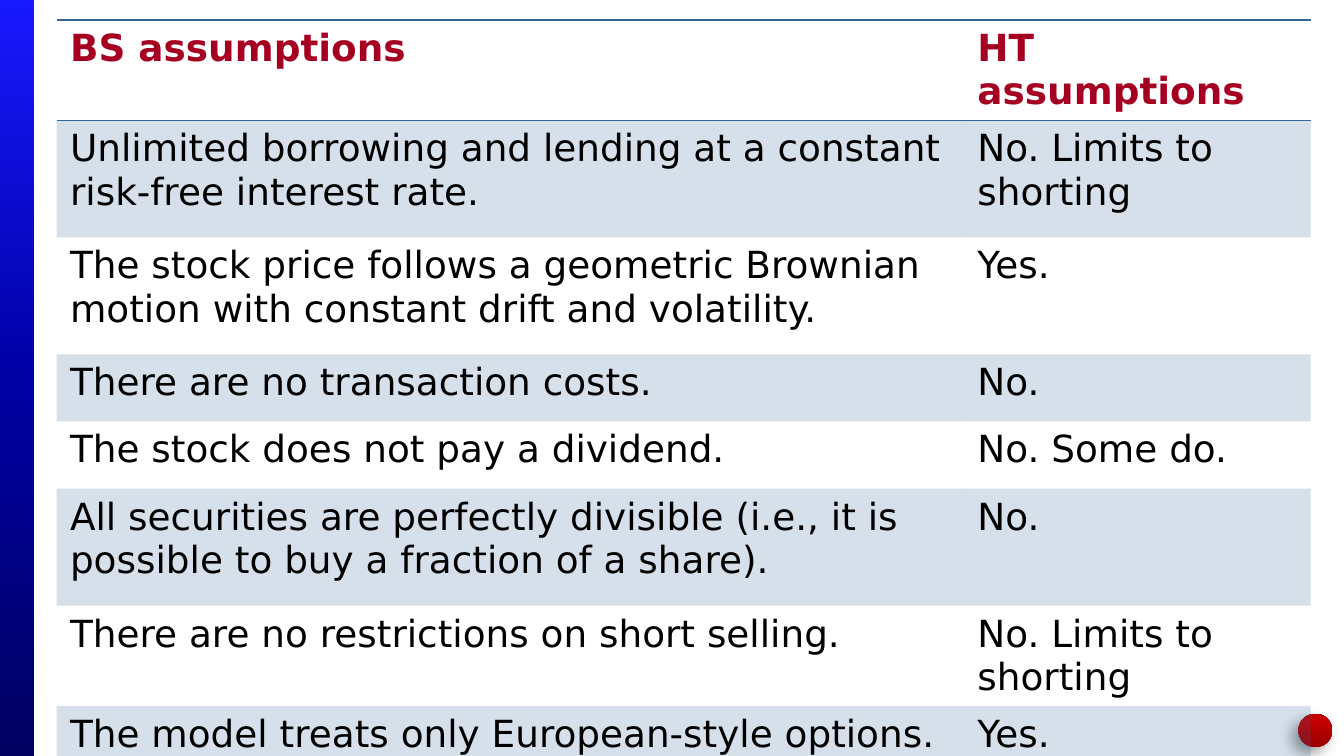
from pptx import Presentation
from pptx.dml.color import RGBColor
from pptx.enum.shapes import MSO_SHAPE
from pptx.oxml import parse_xml
from pptx.oxml.ns import nsdecls, qn
from pptx.util import Cm, Pt

CRIMSON = RGBColor(0xA5, 0x00, 0x21)
BLACK = RGBColor(0x00, 0x00, 0x00)
STEEL = RGBColor(0x33, 0x66, 0x99)
BAR_STOPS = [(0, RGBColor(0x19, 0x19, 0xFF)), (50, RGBColor(0x00, 0x00, 0xA5)),
             (100, RGBColor(0x00, 0x00, 0x60))]
BALL_STOPS = [(0, RGBColor(0x98, 0x00, 0x00)), (80, RGBColor(0xC6, 0x00, 0x00)),
              (100, RGBColor(0xC7, 0x00, 0x00))]

FONT = "DejaVu Sans"
PLAIN_STYLE = "{2D5ABB26-0587-4C30-8999-92F81FD0307C}"
COLUMNS = [17.15, 6.55]
SHORT, TALL = 1.27, 2.21
ROWS = [
    (SHORT, "BS assumptions", "HT assumptions"),
    (TALL, "Unlimited borrowing and lending at a constant risk-free interest rate.",
     "No. Limits to shorting"),
    (TALL, "The stock price follows a geometric Brownian motion with constant drift "
     "and volatility.", "Yes."),
    (SHORT, "There are no transaction costs.", "No."),
    (SHORT, "The stock does not pay a dividend.", "No. Some do."),
    (TALL, "All securities are perfectly divisible (i.e., it is possible to buy a "
     "fraction of a share).", "No."),
    (SHORT, "There are no restrictions on short selling.", "No. Limits to shorting"),
    (SHORT, "The model treats only European-style options.", "Yes."),
]


def add_gradient_shape(s, kind, box, stops, angle):
    """Add a borderless shape filled with a linear gradient."""
    sp = s.shapes.add_shape(kind, *map(Cm, box))
    sp.shadow.inherit = False
    sp.line.fill.background()
    sp.fill.gradient()
    grad = sp._element.spPr.find(qn("a:gradFill"))
    stop_xml = "".join(f'<a:gs pos="{pos * 1000}"><a:srgbClr val="{color}"/></a:gs>'
                       for pos, color in stops)
    grad.getparent().replace(grad, parse_xml(
        f'<a:gradFill {nsdecls("a")} rotWithShape="1"><a:gsLst>{stop_xml}</a:gsLst>'
        f'<a:lin ang="{angle * 60000}" scaled="0"/></a:gradFill>'))
    return sp


def add_side_bar(s, box):
    """Add the blue bar down the left edge."""
    add_gradient_shape(s, MSO_SHAPE.RECTANGLE, box, BAR_STOPS, 90)


def add_ball(s, box):
    """Add the red ball with its soft shadow."""
    sp = add_gradient_shape(s, MSO_SHAPE.OVAL, box, BALL_STOPS, 270)
    sp._element.spPr.find(qn("a:effectLst")).append(parse_xml(
        f'<a:outerShdw {nsdecls("a")} blurRad="{Pt(8)}" dist="{Pt(5)}" dir="8100000" '
        'algn="tr" rotWithShape="0"><a:srgbClr val="000000"><a:alpha val="40000"/>'
        '</a:srgbClr></a:outerShdw>'))


def add_border(cell, side):
    """Draw a thin steel line along one side of a cell."""
    cell._tc.get_or_add_tcPr().insert(0, parse_xml(
        f'<a:ln{side} {nsdecls("a")} w="{Pt(1)}"><a:solidFill>'
        f'<a:srgbClr val="{STEEL}"/></a:solidFill></a:ln{side}>'))


def style_cell(cell, row, last):
    """Set the font, band and borders of a cell from its row number."""
    font = cell.text_frame.paragraphs[0].font
    font.name, font.size, font.bold = FONT, Pt(20), row == 0
    font.color.rgb = BLACK if row else CRIMSON
    if row % 2:
        cell.fill.solid()
        cell.fill.fore_color.rgb = STEEL
        color = cell._tc.tcPr.find(f".//{qn('a:srgbClr')}")
        color.append(parse_xml(f'<a:alpha {nsdecls("a")} val="20000"/>'))
    else:
        cell.fill.background()
    if row in (0, last):
        add_border(cell, "B")
    if row == 0:
        add_border(cell, "T")


def add_assumptions_table(s, left, top):
    """Add the table that compares the two sets of assumptions."""
    height = sum(row[0] for row in ROWS)
    table = s.shapes.add_table(len(ROWS), len(COLUMNS), Cm(left), Cm(top),
                               Cm(sum(COLUMNS)), Cm(height)).table
    table.horz_banding = False
    table._tbl.tblPr.find(qn("a:tableStyleId")).text = PLAIN_STYLE
    for column, width in zip(table.columns, COLUMNS):
        column.width = Cm(width)
    for i, (row_height, *texts) in enumerate(ROWS):
        table.rows[i].height = Cm(row_height)
        for j, text in enumerate(texts):
            cell = table.cell(i, j)
            cell.text = text
            style_cell(cell, i, len(ROWS) - 1)


def main():
    """Build the slide and save it."""
    prs = Presentation()
    prs.slide_width, prs.slide_height = Cm(25.4), Cm(14.29)
    s = prs.slides.add_slide(prs.slide_layouts[6])
    add_side_bar(s, (0, 0, 0.64, 14.29))
    add_ball(s, (24.54, 13.49, 0.64, 0.64))
    add_assumptions_table(s, 1.07, 0.38)
    prs.save("out.pptx")


if __name__ == "__main__":
    main()
